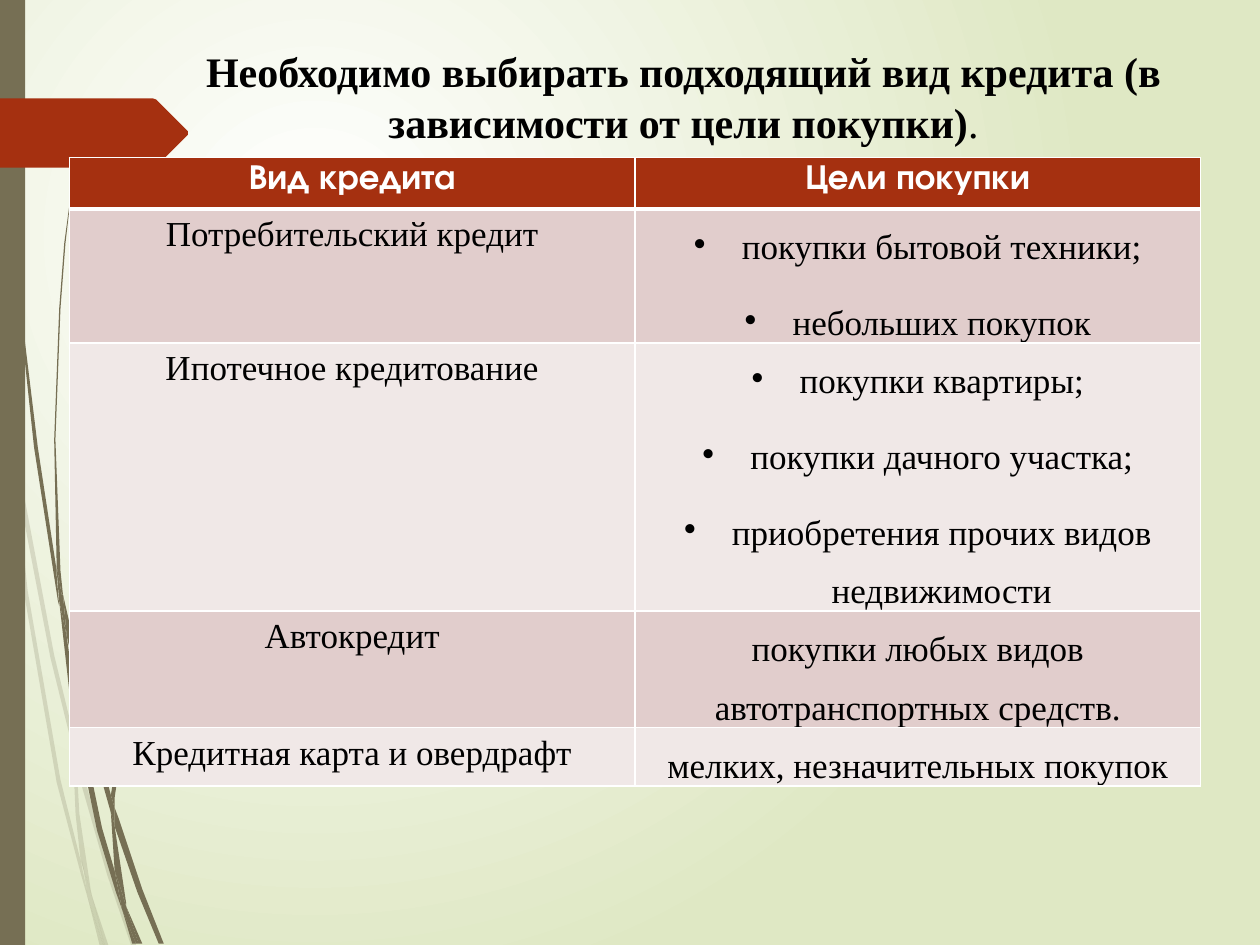
from lxml.etree import SubElement
from pptx import Presentation
from pptx.dml.color import RGBColor
from pptx.enum.shapes import MSO_SHAPE
from pptx.enum.text import MSO_ANCHOR, PP_ALIGN
from pptx.oxml.ns import qn
from pptx.util import Inches, Pt

WHITE = RGBColor(0xFF, 0xFF, 0xFF)
BLACK = RGBColor(0x00, 0x00, 0x00)
PALE_GREEN = RGBColor(0xDF, 0xE8, 0xC4)
OLIVE = RGBColor(0x76, 0x6F, 0x54)
RUST = RGBColor(0xA5, 0x30, 0x10)
ROSE = RGBColor(0xE1, 0xCD, 0xCC)
LIGHT_ROSE = RGBColor(0xF0, 0xE8, 0xE7)

HEAD_FONT = "TeX Gyre Adventor"
BODY_FONT = "Times New Roman"

# Outlines of the grass blades, in inches
FAINT_BLADES = [
    [(0.08, 3.5), (0.06, 3.22), (0, 2.82), (0, 2.99), (0.07, 3.44)],
    [(0.4, 5.22), (0.59, 5.99), (0.59, 5.86), (0.43, 5.2), (0.1, 3.45), (0.12, 3.76)],
    [(0.64, 6.07), (0.61, 5.96), (0.61, 6.1), (0.85, 6.94), (1.04, 7.5), (1.08, 7.5),
     (0.88, 6.92)],
    [(0.83, 7.5), (0.86, 7.5), (0.73, 7.11)],
    [(0.64, 6.83), (0.48, 6.19), (0.22, 4.69), (0.12, 3.76), (0.08, 3.5), (0.19, 4.7),
     (0.45, 6.21), (0.64, 6.93), (0.7, 7.14), (0.69, 7.07)],
    [(0.58, 5.99), (0.6, 6.46), (0.64, 6.83), (0.67, 6.92), (0.73, 7.11), (0.72, 7.06),
     (0.63, 6.46), (0.61, 6.1), (0.61, 6.08)],
    [(0.61, 5.84), (0.76, 4.62), (1.11, 3.49), (1.59, 2.45), (1.87, 1.98), (2.01, 1.75),
     (2.17, 1.54), (2.17, 1.53), (2.01, 1.75), (1.86, 1.97), (1.58, 2.44), (1.1, 3.48),
     (0.75, 4.61), (0.59, 5.84), (0.59, 5.86), (0.61, 5.96)],
    [(0.7, 7.14), (0.79, 7.5), (0.82, 7.5)],
    [(0.61, 6.08), (0.61, 6.1), (0.61, 5.96), (0.59, 5.86), (0.58, 5.99)],
    [(0.67, 6.92), (0.65, 6.83), (0.69, 7.07), (0.7, 7.14), (0.82, 7.5), (0.83, 7.5),
     (0.73, 7.11)],
]
SOLID_BLADES = [
    [(0.05, 1.1), (0.14, 2.33), (0.27, 3.55), (0.46, 4.77), (0.47, 4.81), (0.45, 4.57),
     (0.45, 4.53), (0.3, 3.55), (0.15, 2.32), (0.06, 1.09), (0.04, 0.48), (0.03, 0),
     (0.02, 0), (0.03, 0.48)],
    [(0.73, 5.92), (0.88, 6.45), (0.88, 6.33), (0.88, 6.31), (0.77, 5.9), (0.5, 4.72),
     (0.53, 5.05)],
    [(0.94, 6.49), (0.91, 6.41), (0.91, 6.56), (1.09, 7.08), (1.26, 7.49), (1.3, 7.49),
     (1.13, 7.06)],
    [(0.91, 6.91), (0.81, 6.57), (0.6, 5.56), (0.53, 5.05), (0.47, 4.77), (0.56, 5.57),
     (0.77, 6.59), (0.92, 7.08), (0.97, 7.22), (0.96, 7.17)],
    [(0.5, 4.72), (0.48, 4.53), (0.44, 3.49), (0.48, 2.45), (0.52, 1.93), (0.58, 1.41),
     (0.51, 1.93), (0.47, 2.45), (0.43, 3.49), (0.45, 4.49), (0.49, 4.72)],
    [(1.1, 7.49), (1.13, 7.49), (1, 7.19)],
    [(0.47, 4.77), (0.53, 5.05), (0.5, 4.72), (0.49, 4.72), (0.45, 4.49), (0.45, 4.53)],
    [(0.91, 6.33), (1.03, 5.52), (1.31, 4.76), (1.69, 4.06), (1.91, 3.74), (2.03, 3.59),
     (2.16, 3.44), (2.15, 3.44), (2.03, 3.58), (1.91, 3.73), (1.68, 4.05), (1.29, 4.74),
     (1.01, 5.51), (0.88, 6.31), (0.91, 6.41)],
    [(0.97, 7.22), (1.05, 7.49), (1.08, 7.49)],
    [(0.88, 6.45), (0.91, 6.91), (0.96, 7.06), (1, 7.19), (1, 7.16), (0.91, 6.56),
     (0.9, 6.51)],
    [(0.88, 6.45), (0.9, 6.51), (0.91, 6.56), (0.91, 6.41), (0.88, 6.31), (0.88, 6.33)],
    [(0.96, 7.06), (0.91, 6.91), (0.96, 7.17), (0.97, 7.22), (1.08, 7.49), (1.1, 7.49),
     (1, 7.19)],
]
ARROW = [(1.49, 1.07), (1.24, 1.32), (1.21, 1.33), (0, 1.33), (0, 0.78), (1.21, 0.78),
         (1.24, 0.79), (1.49, 1.04)]

HEADERS = ["Вид кредита", "Цели покупки"]
# Kind of credit, purposes, whether the purposes are bulleted
CREDITS = [
    ("Потребительский кредит", ["покупки бытовой техники;", "небольших покупок"], True),
    ("Ипотечное кредитование",
     ["покупки квартиры;", "покупки дачного участка;",
      "приобретения прочих видов недвижимости"], True),
    ("Автокредит", ["покупки любых видов автотранспортных средств."], False),
    ("Кредитная карта и овердрафт", ["мелких, незначительных покупок"], False),
]


def set_background(page):
    fill = page.background.fill
    fill.gradient()
    for stop, color in zip(fill.gradient_stops, (WHITE, PALE_GREEN)):
        stop.color.rgb = color
    gradient = page._element.find(".//" + qn("a:gradFill"))
    gradient.remove(gradient.find(qn("a:lin")))
    circle = SubElement(gradient, qn("a:path"), path="circle")
    SubElement(circle, qn("a:fillToRect"), l="50000", t="50000", r="100000", b="100000")


def paint(shape, color, opacity=100):
    shape.shadow.inherit = False
    shape.line.fill.background()
    shape.fill.solid()
    shape.fill.fore_color.rgb = color
    if opacity < 100:
        tint = shape._element.spPr.find(".//" + qn("a:srgbClr"))
        SubElement(tint, qn("a:alpha"), val=str(opacity * 1000))


def add_outline(shapes, points, color, opacity=100):
    start, *rest = [(Inches(x), Inches(y)) for x, y in points]
    builder = shapes.build_freeform(*start)
    builder.add_line_segments(rest, close=True)
    paint(builder.convert_to_shape(), color, opacity)


def add_blades(page, blades, opacity):
    group = page.shapes.add_group_shape()
    for points in blades:
        add_outline(group.shapes, points, OLIVE, opacity)


def set_title(page):
    title = page.shapes.title
    title.left, title.top = Inches(0.62), Inches(0.31)
    title.width, title.height = Inches(9.61), Inches(0.91)
    frame = title.text_frame
    frame.vertical_anchor = MSO_ANCHOR.MIDDLE
    para = frame.paragraphs[0]
    set_font(para, 24, BODY_FONT, BLACK)
    for text, bold in (("Необходимо выбирать подходящий вид кредита "
                        "(в зависимости от цели покупки)", True), (".", False)):
        span = para.add_run()
        span.text = text
        span.font.bold = bold


def set_font(para, size, name, color, bold=None):
    para.alignment = PP_ALIGN.CENTER
    para.font.size = Pt(size)
    para.font.name = name
    para.font.color.rgb = color
    para.font.bold = bold


def add_bullet(para):
    para.space_after = Pt(10)
    props = para._p.get_or_add_pPr()
    props.set("marL", str(Inches(0.38)))
    props.set("indent", str(-Inches(0.38)))
    bullet = props.makeelement(qn("a:buChar"), {"char": "•"})
    props.find(qn("a:defRPr")).addprevious(bullet)
    tabs = props.makeelement(qn("a:tabLst"), {})
    SubElement(tabs, qn("a:tab"), pos=str(Inches(0.5)), algn="l")
    bullet.addnext(tabs)


def style_cell(cell, color, top=1, bottom=1):
    props = cell._tc.get_or_add_tcPr()
    for side, width in (("L", 1), ("R", 1), ("T", top), ("B", bottom)):
        line = SubElement(props, qn("a:ln" + side), w=str(Pt(width)))
        SubElement(SubElement(line, qn("a:solidFill")), qn("a:srgbClr"), val=str(WHITE))
    cell.fill.solid()
    cell.fill.fore_color.rgb = color


def fill_purposes(cell, purposes, bulleted):
    cell.margin_left = cell.margin_right = Inches(0.07)
    cell.margin_top = cell.margin_bottom = 0
    cell.text = "\n".join(purposes)
    for para in cell.text_frame.paragraphs:
        set_font(para, 20, BODY_FONT, BLACK, False)
        para.line_spacing = 1.5
        if bulleted:
            add_bullet(para)


def add_credit_table(page):
    rows = len(CREDITS) + 1
    table = page.shapes.add_table(rows, 2, Inches(0.55), Inches(1.25),
                                  Inches(8.98), Inches(0.41 * rows)).table
    for column, text in enumerate(HEADERS):
        cell = table.cell(0, column)
        cell.text = text
        set_font(cell.text_frame.paragraphs[0], 20, HEAD_FONT, WHITE, True)
        style_cell(cell, RUST, bottom=3)
    for row, (kind, purposes, bulleted) in enumerate(CREDITS, 1):
        kind_cell, purpose_cell = table.cell(row, 0), table.cell(row, 1)
        kind_cell.text = kind
        set_font(kind_cell.text_frame.paragraphs[0], 20, BODY_FONT, BLACK, False)
        fill_purposes(purpose_cell, purposes, bulleted)
        for cell in (kind_cell, purpose_cell):
            style_cell(cell, ROSE if row % 2 else LIGHT_ROSE, top=3 if row == 1 else 1)


def main():
    deck = Presentation()
    deck.slide_width, deck.slide_height = Inches(10), Inches(7.5)
    page = deck.slides.add_slide(deck.slide_layouts[5])
    # Backdrop: gradient, grass, side bar and arrow
    set_background(page)
    add_blades(page, FAINT_BLADES, 20)
    add_blades(page, SOLID_BLADES, 100)
    bar = page.shapes.add_shape(MSO_SHAPE.RECTANGLE, 0, 0, Inches(0.2), Inches(7.5))
    paint(bar, OLIVE)
    add_outline(page.shapes, ARROW, RUST)
    # Content
    add_credit_table(page)
    set_title(page)
    deck.save("out.pptx")


if __name__ == "__main__":
    main()
